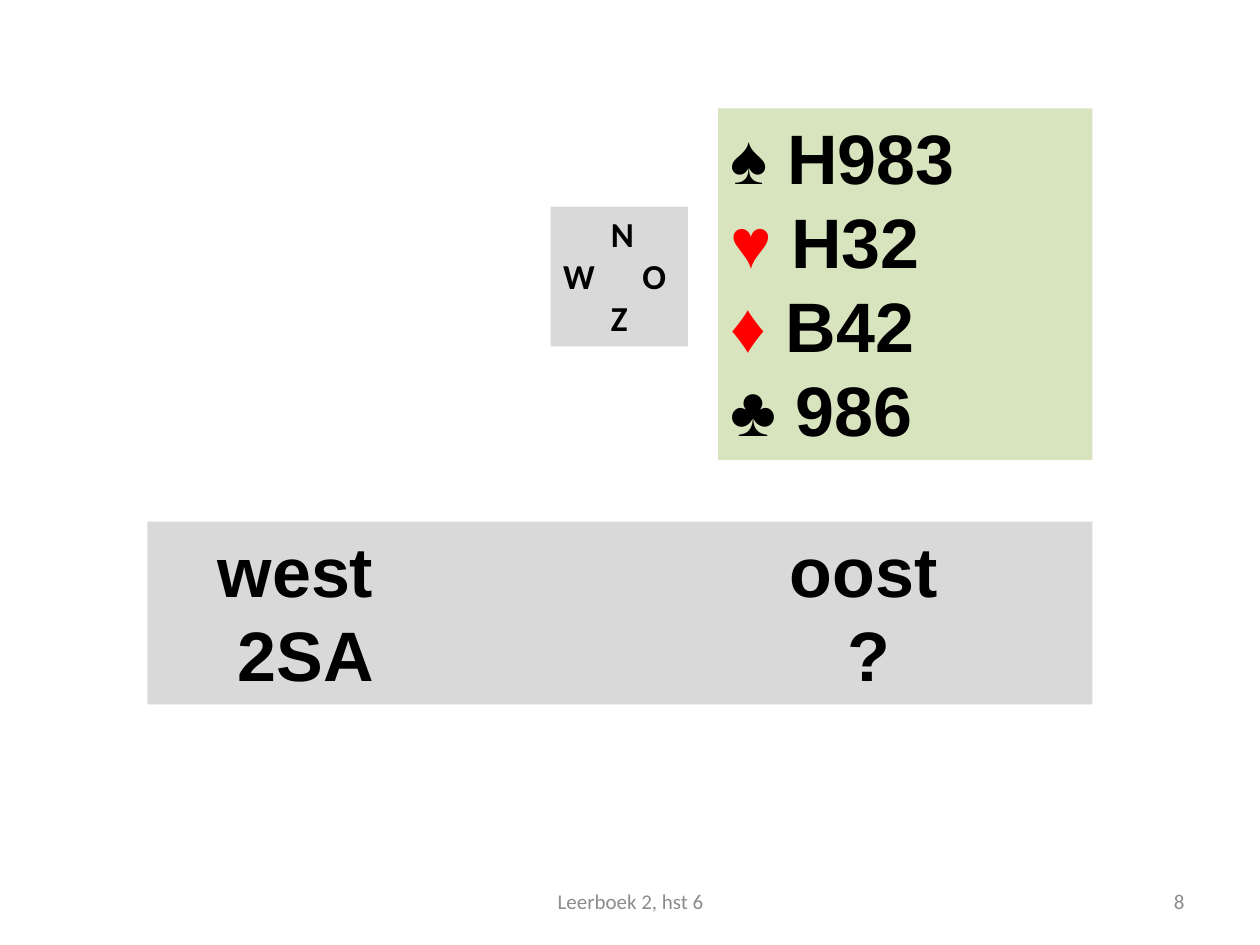
from pptx import Presentation
from pptx.dml.color import RGBColor
from pptx.enum.text import MSO_ANCHOR, MSO_AUTO_SIZE, PP_ALIGN
from pptx.oxml.ns import qn
from pptx.util import Inches, Pt
from lxml.etree import SubElement

BLACK = RGBColor(0x00, 0x00, 0x00)
RED = RGBColor(0xFF, 0x00, 0x00)
GREEN = RGBColor(0xD7, 0xE4, 0xBD)
GREY = RGBColor(0xD9, 0xD9, 0xD9)
FOOTER_GREY = RGBColor(0x8C, 0x8C, 0x8C)


class BridgeSlide:
    """Style and drawing methods for one bridge bidding slide."""

    def __init__(self, s):
        self.s = s
        self.card_font = "Arial"
        self.text_font = "Calibri"
        self.card_size = 40

    def box(self, left, top, width, height, fill=None):
        sp = self.s.shapes.add_textbox(
            Inches(left), Inches(top), Inches(width), Inches(height))
        if fill is not None:
            sp.fill.solid()
            sp.fill.fore_color.rgb = fill
        tf = sp.text_frame
        tf.word_wrap = True
        return tf

    def run(self, p, text, font, size, color=BLACK, bold=True):
        r = p.add_run()
        r.text = text
        r.font.name = font
        r.font.size = Pt(size)
        r.font.bold = bold
        r.font.color.rgb = color

    def paragraph(self, tf, index):
        return tf.add_paragraph() if index else tf.paragraphs[0]

    def tab_stops(self, p, stops):
        tabs = SubElement(p._p.get_or_add_pPr(), qn("a:tabLst"))
        for stop in stops:
            SubElement(tabs, qn("a:tab"), pos=str(Inches(stop)), algn="l")

    def hand(self, place, suits):
        tf = self.box(*place, fill=GREEN)
        tf.auto_size = MSO_AUTO_SIZE.SHAPE_TO_FIT_TEXT
        for i, (suit, cards, color) in enumerate(suits):
            p = self.paragraph(tf, i)
            self.run(p, suit + " ", self.card_font, self.card_size, color)
            self.run(p, cards, self.card_font, self.card_size)

    def tabbed(self, place, rows, font, size):
        tf = self.box(*place, fill=GREY)
        tf.auto_size = MSO_AUTO_SIZE.SHAPE_TO_FIT_TEXT
        for i, (text, stops) in enumerate(rows):
            p = self.paragraph(tf, i)
            self.tab_stops(p, stops)
            self.run(p, text, font, size)

    def footer(self, place, text, align):
        tf = self.box(*place)
        tf.vertical_anchor = MSO_ANCHOR.MIDDLE
        p = tf.paragraphs[0]
        p.alignment = align
        self.run(p, text, self.text_font, 12, FOOTER_GREY, bold=False)


def main():
    prs = Presentation()
    prs.slide_width, prs.slide_height = Inches(10), Inches(7.5)
    slide = BridgeSlide(prs.slides.add_slide(prs.slide_layouts[6]))

    # East's hand
    slide.hand((5.7, 0.86, 2.97, 2.79), [
        ("♠", "H983", BLACK),
        ("♥", "H32", RED),
        ("♦", "B42", RED),
        ("♣", "986", BLACK),
    ])

    # Compass
    slide.tabbed((4.37, 1.64, 1.09, 1.11), [
        ("\tN", [0.38]),
        ("W\tO", [0.63]),
        ("\tZ", [0.38]),
    ], slide.text_font, 20)

    # Bidding
    slide.tabbed((1.17, 4.14, 7.5, 1.45), [
        ("\twest\toost", [0.46, 5]),
        ("\t2SA\t?", [0.62, 5.46]),
    ], slide.card_font, slide.card_size)

    # Slide number and footer
    slide.footer((7.17, 6.95, 2.33, 0.4), "8", PP_ALIGN.RIGHT)
    slide.footer((3.42, 6.95, 3.17, 0.4), "Leerboek 2, hst 6", PP_ALIGN.CENTER)

    prs.save("out.pptx")


if __name__ == "__main__":
    main()
